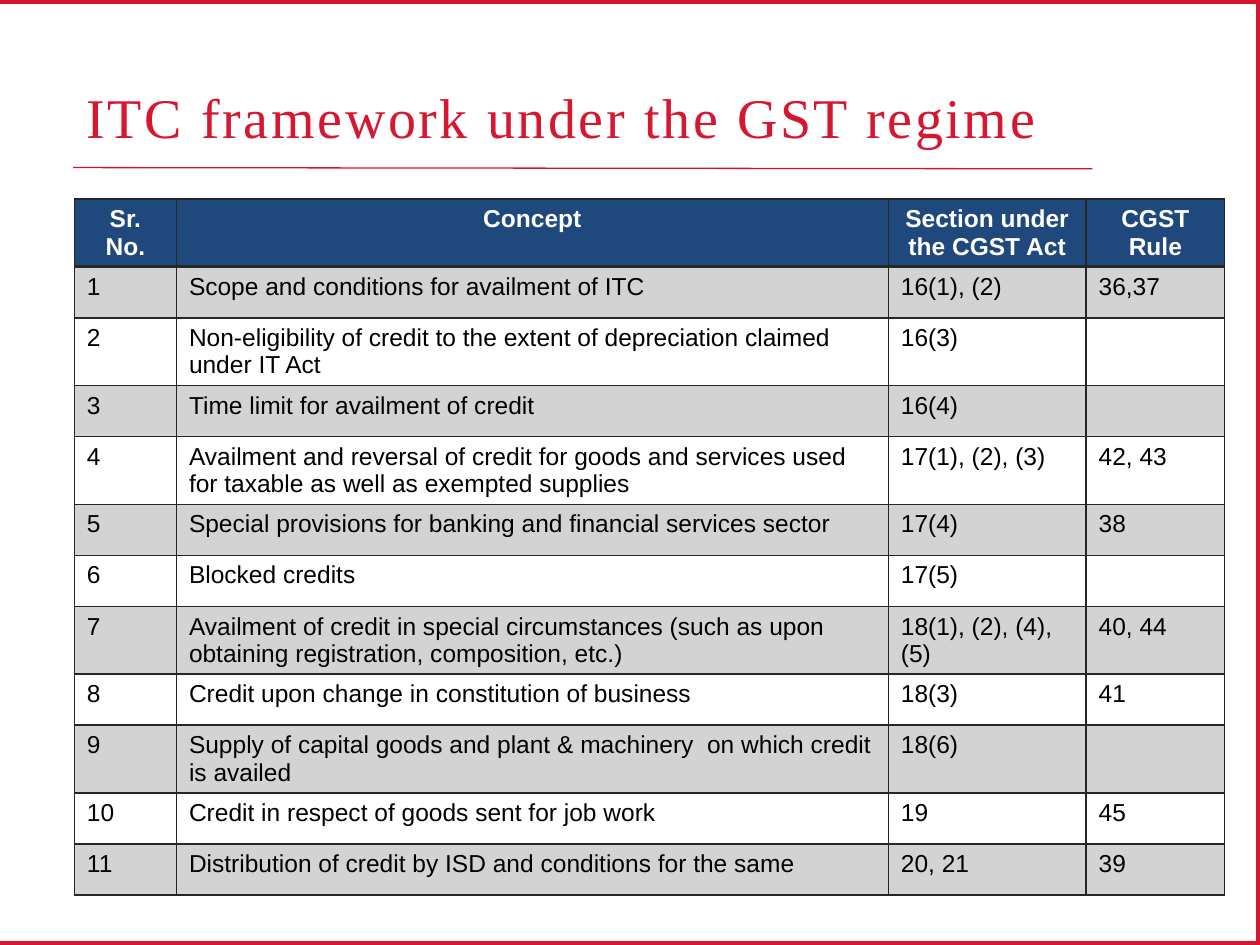
from dataclasses import dataclass

from lxml import etree
from pptx import Presentation
from pptx import util as u
from pptx.dml.color import RGBColor
from pptx.enum import shapes, text
from pptx.oxml.ns import qn


@dataclass(frozen=True)
class Theme:
    red: str = "D7162F"
    rule_red: str = "D7112A"
    navy: str = "1F497D"
    charcoal: str = "262626"
    white: str = "FFFFFF"
    black: str = "000000"
    heading_font: str = "Times New Roman"
    body_font: str = "Arial"
    title_size: float = 32
    table_size: float = 14
    title_spacing: float = 1.5
    band_opacity: int = 20


COLUMN_WIDTHS = (0.81, 5.65, 1.57, 1.1)
MINIMUM_TABLE_HEIGHT = 4.87
CELL_BOTTOM_MARGIN = 0.02
HEADER = ("Sr. No.", "Concept", "Section under the CGST Act", "CGST Rule")
PROVISIONS = (
    ("Scope and conditions for availment of ITC", "16(1), (2)", "36,37"),
    ("Non-eligibility of credit to the extent of depreciation claimed under IT Act",
     "16(3)", ""),
    ("Time limit for availment of credit", "16(4)", ""),
    ("Availment and reversal of credit for goods and services used for taxable "
     "as well as exempted supplies", "17(1), (2), (3)", "42, 43"),
    ("Special provisions for banking and financial services sector", "17(4)", "38"),
    ("Blocked credits", "17(5)", ""),
    ("Availment of credit in special circumstances (such as upon obtaining "
     "registration, composition, etc.)", "18(1), (2), (4), (5)", "40, 44"),
    ("Credit upon change in constitution of business", "18(3)", "41"),
    ("Supply of capital goods and plant & machinery  on which credit is availed",
     "18(6)", ""),
    ("Credit in respect of goods sent for job work", "19", "45"),
    ("Distribution of credit by ISD and conditions for the same", "20, 21", "39"),
)


class SlideBuilder:
    def __init__(self, slide, theme):
        self.slide = slide
        self.theme = theme

    def background(self):
        fill = self.slide.background.fill
        fill.solid()
        fill.fore_color.rgb = RGBColor.from_string(self.theme.white)

    def rule(self, start, end):
        rule = self.slide.shapes.add_connector(
            shapes.MSO_CONNECTOR.STRAIGHT, *map(u.Inches, start + end))
        rule.line.color.rgb = RGBColor.from_string(self.theme.rule_red)
        rule.line.width = u.Pt(0.75)
        etree.SubElement(rule._element.spPr, qn("a:effectLst"))

    def frame(self, *box):
        frame = self.slide.shapes.add_shape(
            shapes.MSO_SHAPE.RECTANGLE, *map(u.Inches, box))
        frame.shadow.inherit = False
        frame.fill.background()
        frame.line.color.rgb = RGBColor.from_string(self.theme.red)
        frame.line.width = u.Pt(4.5)

    def run(self, paragraph, wording, font, size, color, bold=False):
        run = paragraph.add_run()
        run.text = wording
        run.font.name = font
        run.font.size = u.Pt(size)
        run.font.bold = bold
        run.font.color.rgb = RGBColor.from_string(color)
        return run

    def title(self, wording, *box):
        frame = self.slide.shapes.add_textbox(*map(u.Inches, box)).text_frame
        frame.word_wrap = True
        frame.vertical_anchor = text.MSO_ANCHOR.BOTTOM
        run = self.run(frame.paragraphs[0], wording, self.theme.heading_font,
                       self.theme.title_size, self.theme.red)
        run.font._element.set("spc", str(int(self.theme.title_spacing * 100)))

    def table(self, left, top, widths, height, rows):
        table = self.slide.shapes.add_table(
            len(rows), len(widths), u.Inches(left), u.Inches(top),
            u.Inches(sum(widths)), u.Inches(height)).table
        table.first_row = table.horz_banding = False
        for column, width in zip(table.columns, widths):
            column.width = u.Inches(width)
        for row_index, row in enumerate(rows):
            for column_index, wording in enumerate(row):
                self.cell(table.cell(row_index, column_index), row_index, wording)

    def cell(self, cell, row_index, wording):
        theme = self.theme
        header = row_index == 0
        cell.margin_bottom = u.Inches(CELL_BOTTOM_MARGIN)
        paragraph = cell.text_frame.paragraphs[0]
        paragraph.font.size = u.Pt(theme.table_size)
        if header:
            paragraph.alignment = text.PP_ALIGN.CENTER
        if wording:
            self.run(paragraph, wording, theme.body_font, theme.table_size,
                     theme.white if header else theme.black, header)
        if header or row_index % 2:
            cell.fill.solid()
            cell.fill.fore_color.rgb = RGBColor.from_string(
                theme.navy if header else theme.charcoal)
            if not header:
                color = cell._tc.tcPr.find(".//" + qn("a:srgbClr"))
                etree.SubElement(color, qn("a:alpha"),
                                 val=str(theme.band_opacity * 1000))
        else:
            cell.fill.background()
        self.borders(cell, top=2 if row_index == 1 else 1, bottom=2 if header else 1)

    def borders(self, cell, top, bottom):
        """Put the four edges ahead of the cell fill, as the schema requires."""
        edges = (("lnL", 1), ("lnR", 1), ("lnT", top), ("lnB", bottom))
        for position, (tag, width) in enumerate(edges):
            edge = etree.Element(qn("a:" + tag), w=str(u.Pt(width)))
            fill = etree.SubElement(edge, qn("a:solidFill"))
            etree.SubElement(fill, qn("a:srgbClr"), val=self.theme.charcoal)
            cell._tc.tcPr.insert(position, edge)


def main():
    deck = Presentation()
    deck.slide_width, deck.slide_height = u.Inches(10), u.Inches(7.5)
    builder = SlideBuilder(deck.slides.add_slide(deck.slide_layouts[6]), Theme())
    builder.background()
    builder.rule((0.58, 1.33), (8.67, 1.34))
    builder.frame(-0.04, 0, 10.04, 7.5)
    builder.title("ITC framework under the GST regime", 0.59, 0.29, 8.08, 0.95)
    numbered = [(str(number), *row) for number, row in enumerate(PROVISIONS, 1)]
    builder.table(0.59, 1.58, COLUMN_WIDTHS, MINIMUM_TABLE_HEIGHT,
                  [HEADER, *numbered])
    deck.save("out.pptx")


if __name__ == "__main__":
    main()
